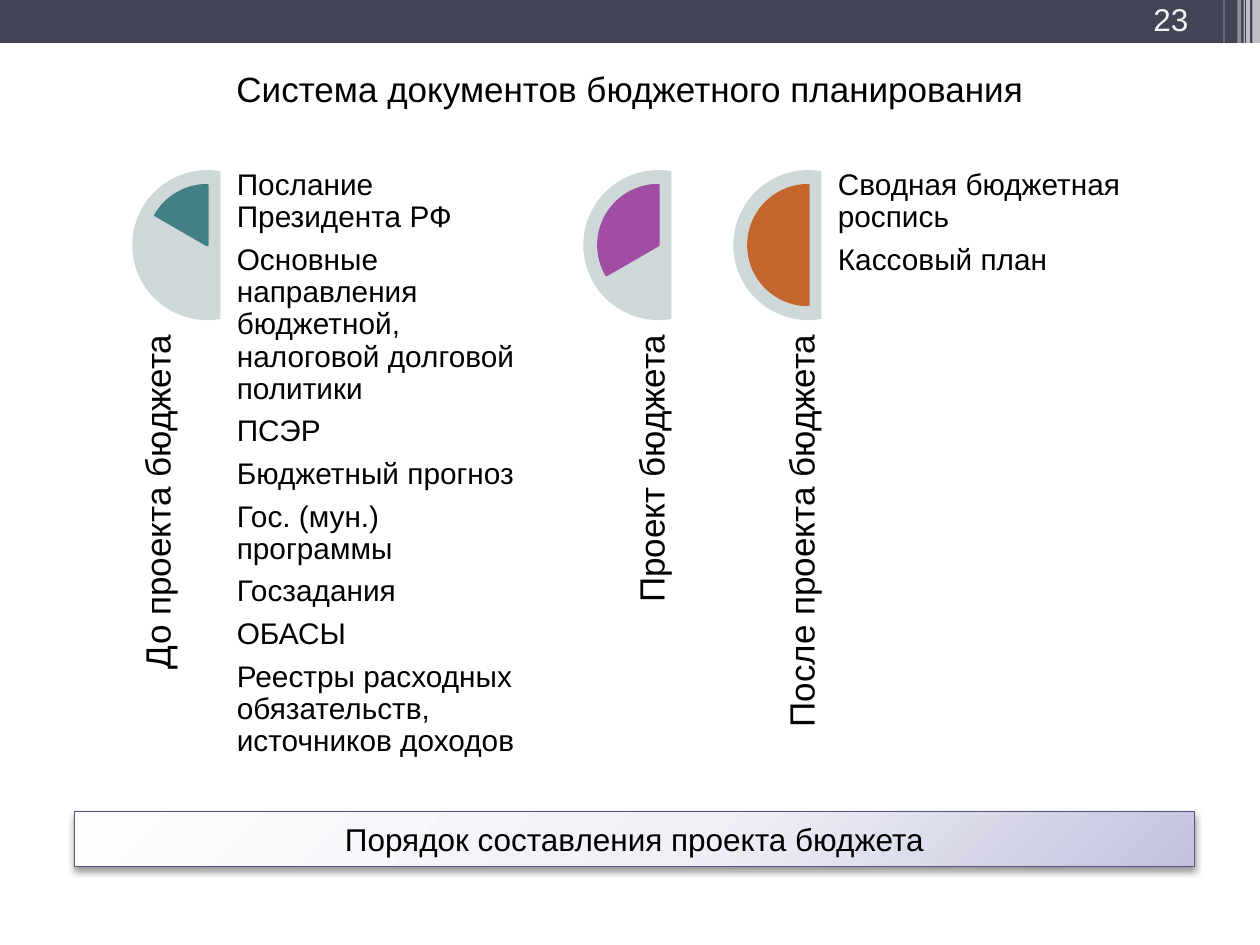
from pptx import Presentation
from pptx.dml.color import RGBColor
from pptx.enum.shapes import MSO_SHAPE
from pptx.enum.text import MSO_ANCHOR, PP_ALIGN
from pptx.oxml import parse_xml
from pptx.oxml.ns import nsdecls, qn
from pptx.util import Inches, Pt

RECT, CHORD, PIE = MSO_SHAPE.RECTANGLE, MSO_SHAPE.CHORD, MSO_SHAPE.PIE
TOP, MIDDLE, BOTTOM = MSO_ANCHOR.TOP, MSO_ANCHOR.MIDDLE, MSO_ANCHOR.BOTTOM
LEFT, CENTER, RIGHT = PP_ALIGN.LEFT, PP_ALIGN.CENTER, PP_ALIGN.RIGHT

COLORS = {
    "text": "000000", "white": "FFFFFF", "number": "F2F2F2",
    "header": "424456", "disc": "CFD8D9", "border": "53548A",
    "before": "438086", "draft": "A04DA3", "after": "C4652D",
}
GRADIENT = [(0, "FEFEFE"), (55, "F0F1F7"), (100, "C2C2DD")]


class SlideBuilder:
    font = "Arial"

    def __init__(self, page):
        self.page = page

    def shape(self, kind, at, color, line=None, width=1.5, alpha=None, angles=()):
        shape = self.page.shapes.add_shape(kind, *map(Inches, at))
        shape.shadow.inherit = False
        for index, angle in enumerate(angles):
            shape.adjustments[index] = angle * 0.6  # degrees to preset units
        shape.fill.solid()
        shape.fill.fore_color.rgb = RGBColor.from_string(COLORS[color])
        if alpha is not None:
            fill = shape._element.spPr.find(qn("a:solidFill"))
            fill[0].append(parse_xml(f'<a:alpha {nsdecls("a")} val="{alpha * 1000}"/>'))
        if line:
            shape.line.color.rgb = RGBColor.from_string(COLORS[line])
            shape.line.width = Pt(width)
        else:
            shape.line.fill.background()
        return shape

    def set_text(self, box, lines, size, color="text", align=LEFT, anchor=TOP,
                 spacing=None, after=None):
        frame = box.text_frame
        frame.word_wrap = True
        frame.vertical_anchor = anchor
        for index, line in enumerate(lines):
            para = frame.add_paragraph() if index else frame.paragraphs[0]
            para.text = line
            para.alignment = align
            para.line_spacing = spacing
            para.space_after = after
            para.font.name = self.font
            para.font.size = Pt(size)
            para.font.color.rgb = RGBColor.from_string(COLORS[color])

    def text(self, at, lines, size, inset=True, **style):
        box = self.page.shapes.add_textbox(*map(Inches, at))
        if not inset:
            frame = box.text_frame
            frame.margin_left = frame.margin_right = 0
            frame.margin_top = frame.margin_bottom = 0
        self.set_text(box, lines, size, **style)
        return box

    def stage(self, left, label, color, start, items=(), label_gap=0):
        # Disc with a growing sector
        self.shape(CHORD, (left, 1.35, 1.19, 1.19), "disc", angles=(80, 280))
        self.shape(PIE, (left + 0.12, 1.47, 0.95, 0.95), color, line=color,
                   angles=(start, 270))
        # Vertical label and list of documents
        box = self.text((left - 1.37, 4.02, 3.44, 0.71), [label], 20, inset=False,
                        align=RIGHT, anchor=BOTTOM, spacing=0.9)
        box.rotation = 270
        box.text_frame.margin_bottom = Inches(label_gap)
        if items:
            self.text((left + 0.83, 1.35, 2.37, 4.75), items, 17, inset=False,
                      spacing=0.9, after=Pt(6))

    def banner(self, at, label):
        shape = self.shape(RECT, at, "white", line="border", width=0.75)
        properties = shape._element.spPr
        stops = "".join(f'<a:gs pos="{place * 1000}"><a:srgbClr val="{color}"/></a:gs>'
                        for place, color in GRADIENT)
        properties.replace(properties.find(qn("a:solidFill")), parse_xml(
            f'<a:gradFill {nsdecls("a")} rotWithShape="1"><a:gsLst>{stops}</a:gsLst>'
            '<a:path path="circle"><a:fillToRect l="-40000" t="-90000" r="140000" '
            'b="190000"/></a:path></a:gradFill>'))
        properties.find(qn("a:effectLst")).append(parse_xml(
            f'<a:outerShdw {nsdecls("a")} blurRad="{Pt(4.1)}" dist="{Pt(2)}" '
            'dir="5400000" rotWithShape="0"><a:srgbClr val="000000">'
            '<a:alpha val="40000"/></a:srgbClr></a:outerShdw>'))
        self.set_text(shape, [label], 18, align=CENTER, anchor=MIDDLE)


def main():
    deck = Presentation()
    deck.slide_width, deck.slide_height = Inches(10), Inches(7.5)
    builder = SlideBuilder(deck.slides.add_slide(deck.slide_layouts[6]))

    # Header bar with translucent stripes
    builder.shape(RECT, (0, 0, 10, 0.34), "header")
    for left, width, height, alpha in [
        (9.94, 0.06, 0.68, 65), (9.89, 0.03, 0.68, 65), (9.87, 0.01, 0.68, 60),
        (9.82, 0.03, 0.68, 40), (9.71, 0.01, 0.64, 30),
    ]:
        builder.shape(RECT, (left, 0, width, height), "white", alpha=alpha)

    # Title
    builder.text((0.5, 0.44, 9, 0.52), ["Система документов бюджетного планирования"],
                 20, align=CENTER, anchor=MIDDLE)

    # Three planning stages
    builder.stage(1.05, "До проекта бюджета", "before", 210, [
        "Послание Президента РФ",
        "Основные направления бюджетной, налоговой долговой политики",
        "ПСЭР",
        "Бюджетный прогноз",
        "Гос. (мун.) программы",
        "Госзадания",
        "ОБАСЫ",
        "Реестры расходных обязательств, источников доходов",
    ], label_gap=0.38)
    builder.stage(4.63, "Проект бюджета", "draft", 150)
    builder.stage(5.82, "После проекта бюджета", "after", 90,
                  ["Сводная бюджетная роспись", "Кассовый план"])

    # Page number and bottom banner
    builder.text((8.74, 0.02, 0.79, 0.33), ["23"], 18, color="number",
                 align=RIGHT, anchor=BOTTOM)
    builder.banner((0.59, 6.44, 8.89, 0.44), "Порядок составления проекта бюджета")

    deck.save("out.pptx")


if __name__ == "__main__":
    main()
